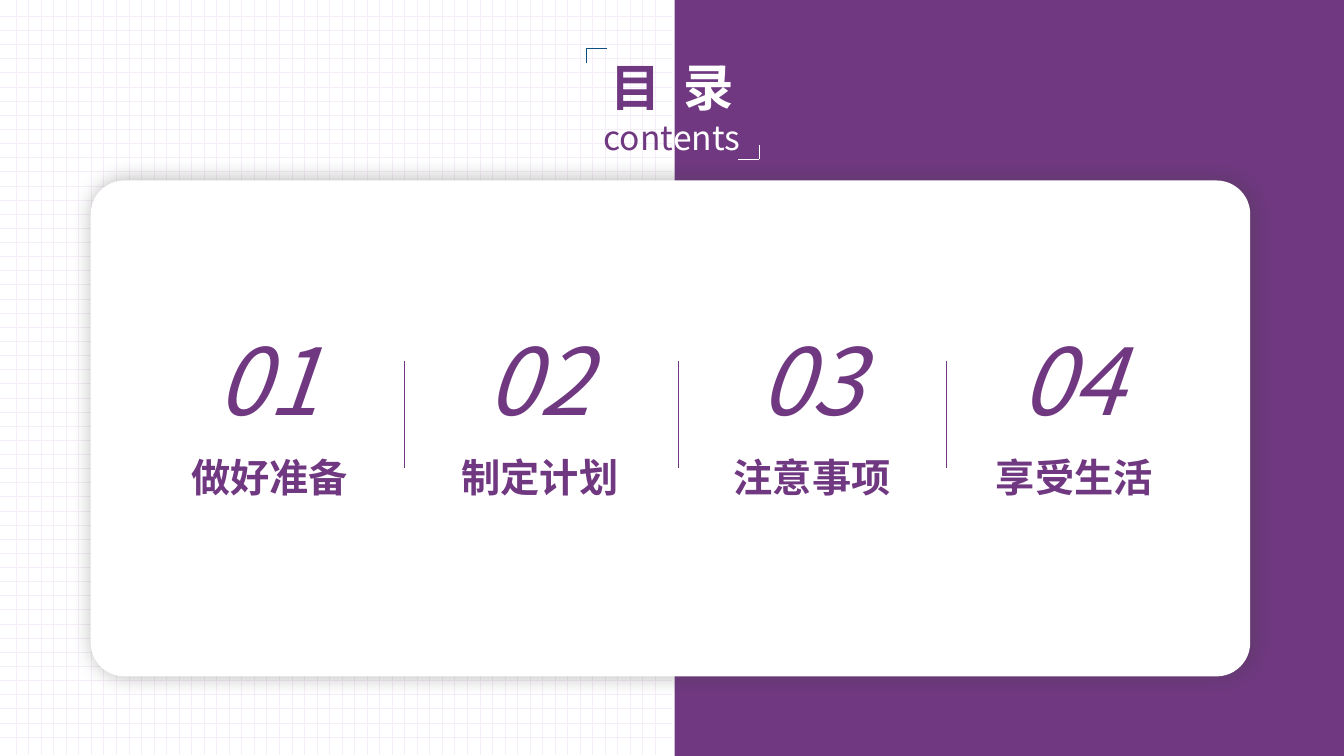
from lxml import etree
from pptx import Presentation
from pptx import util as u
from pptx.dml.color import RGBColor
from pptx.enum import shapes, text
from pptx.oxml import ns

PURPLE, WHITE, GRID, BLUE = "703881", "FFFFFF", "F5EDF7", "0D4E81"
FONT = "Noto Sans CJK SC"


def add_line(parent, x1, y1, x2, y2, color, width):
    line = parent.shapes.add_connector(
        shapes.MSO_CONNECTOR.STRAIGHT,
        u.Inches(x1), u.Inches(y1), u.Inches(x2), u.Inches(y2))
    line.line.color.rgb = RGBColor.from_string(color)
    line.line.width = u.Pt(width)
    etree.SubElement(line._element.spPr, ns.qn("a:effectLst"))


def add_span(para, words, size, color, bold=False, italic=False):
    span = para.add_run()
    span.text = words
    font = span.font
    font.size, font.bold, font.italic, font.name = u.Pt(size), bold, italic, FONT
    font.color.rgb = RGBColor.from_string(color)
    etree.SubElement(span._r.rPr, ns.qn("a:ea"), typeface=FONT)
    return span


deck = Presentation()
deck.slide_width, deck.slide_height = u.Inches(13.33), u.Inches(7.5)
page = deck.slides.add_slide(deck.slide_layouts[5])

# Fine grid on the left half
grid = page.shapes.add_group_shape()
for i in range(52):
    y = 0.16 + i * 7.15 / 51
    add_line(grid, 0, y, 6.67, y, GRID, 0.25)
for i in range(52):
    x = 0.16 + i * 6.34 / 51
    add_line(grid, x, -0.01, x, 7.49, GRID, 0.5)

# Purple right half and white card
for kind, left, top, width, height, color in [
    (shapes.MSO_SHAPE.RECTANGLE, 6.69, 0, 6.67, 7.5, PURPLE),
    (shapes.MSO_SHAPE.ROUNDED_RECTANGLE, 0.9, 1.79, 11.5, 4.92, WHITE),
]:
    card = page.shapes.add_shape(kind, u.Inches(left), u.Inches(top),
                                 u.Inches(width), u.Inches(height))
    card.shadow.inherit = False
    card.fill.solid()
    card.fill.fore_color.rgb = RGBColor.from_string(color)
    card.line.fill.background()

# Soft shadow behind the card
card.adjustments[0] = 0.068
effects = card._element.spPr.find(ns.qn("a:effectLst"))
shadow = etree.SubElement(effects, ns.qn("a:outerShdw"), dir="0", rotWithShape="0",
                          blurRad=str(u.Pt(15)), dist=str(u.Pt(2)))
tint = etree.SubElement(shadow, ns.qn("a:srgbClr"), val="404040")
etree.SubElement(tint, ns.qn("a:alpha"), val="40000")

# Title, split in colour where the background changes
title = page.shapes.title
page.shapes._spTree.append(title._element)
title.left, title.top = u.Inches(4.56), u.Inches(0.51)
title.width, title.height = u.Inches(4.21), u.Inches(1.11)
frame = title.text_frame
frame.word_wrap = True
frame.auto_size = text.MSO_AUTO_SIZE.NONE
frame.vertical_anchor = text.MSO_ANCHOR.TOP
para = frame.paragraphs[0]
para.alignment = text.PP_ALIGN.CENTER
add_span(para, "目", 36, PURPLE, bold=True)
gap = add_span(para, " ", 36, PURPLE, bold=True)
gap._r.rPr.set("spc", "800")
add_span(para, "录", 36, WHITE, bold=True)
para = frame.add_paragraph()
para.alignment = text.PP_ALIGN.CENTER
add_span(para, "cont", 24, PURPLE)
add_span(para, "ents", 24, WHITE)

# Corner marks around the title
for x, y, across, down, color in [(5.82, 0.48, 0.2, 0.15, BLUE),
                                  (7.53, 1.58, -0.21, -0.14, WHITE)]:
    corner = page.shapes.add_group_shape()
    add_line(corner, x, y, x + across, y, color, 0.5)
    add_line(corner, x, y, x, y + down, color, 0.5)

# Four numbered chapters
chapters = [("01", 2.05, "做好准备", 1.02), ("02", 4.73, "制定计划", 3.7),
            ("03", 7.43, "注意事项", 6.4), ("04", 10.02, "享受生活", 9)]
for number, number_left, name, name_left in chapters:
    box = page.shapes.add_textbox(u.Inches(number_left), u.Inches(3.16),
                                  u.Inches(2.18), u.Inches(1.21))
    box.text_frame.word_wrap = True
    span = add_span(box.text_frame.paragraphs[0], number, 66, PURPLE, italic=True)
    outline = etree.Element(ns.qn("a:ln"), w=str(u.Pt(0.75)))
    fill = etree.SubElement(outline, ns.qn("a:solidFill"))
    etree.SubElement(fill, ns.qn("a:srgbClr"), val=PURPLE)
    span._r.rPr.insert(0, outline)

    box = page.shapes.add_textbox(u.Inches(name_left), u.Inches(4.45),
                                  u.Inches(3.31), u.Inches(0.57))
    box.text_frame.word_wrap = True
    para = box.text_frame.paragraphs[0]
    para.alignment = text.PP_ALIGN.CENTER
    add_span(para, name, 28, PURPLE, bold=True)

# Dividers between chapters
for x in (4.01, 6.73, 9.39):
    add_line(page, x, 3.58, x, 4.64, PURPLE, 0.5)

deck.save("out.pptx")
